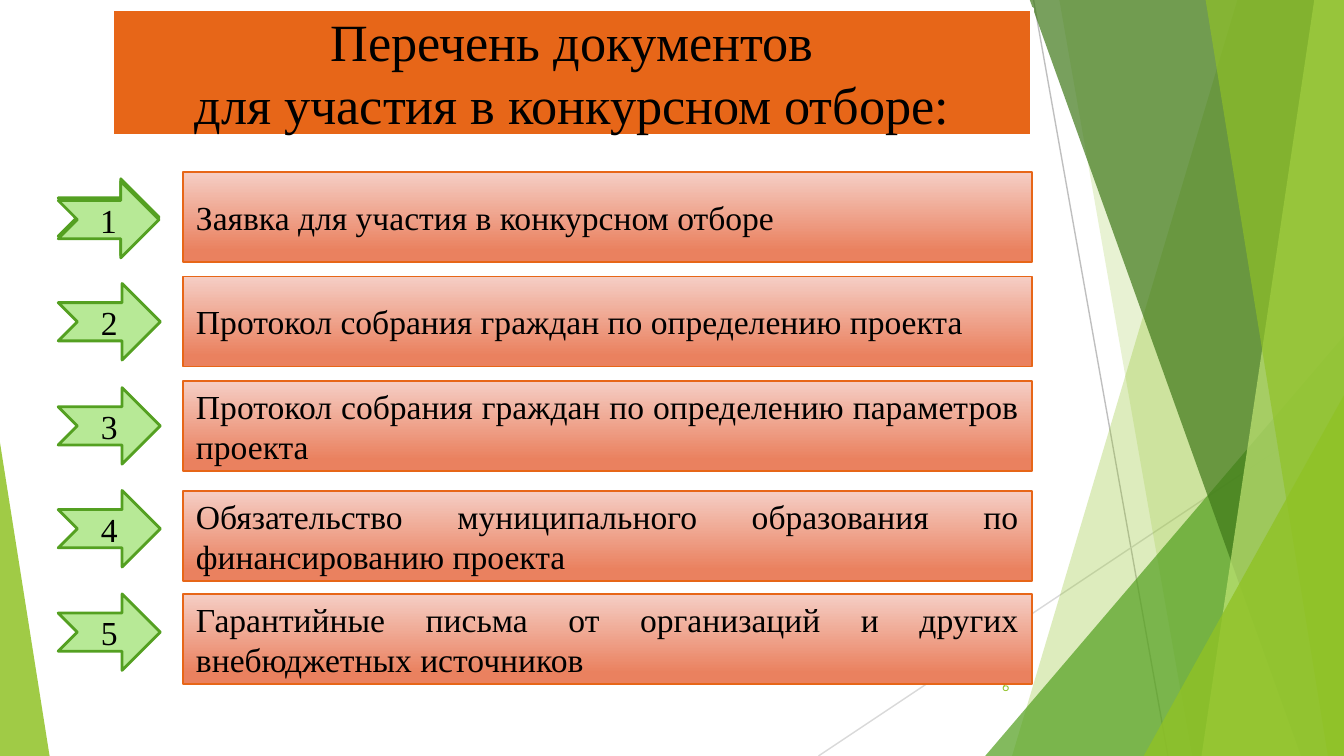
"""Build the slide listing the documents for the competitive selection."""
from lxml import etree
from pptx import Presentation
from pptx import util as u
from pptx.dml import color
from pptx.enum import shapes, text
from pptx.oxml import ns

Pt = u.Pt
COLORS = {
    "lime": "90C226", "pale lime": "C0E474", "green": "54A021", "dark green": "3F7819",
    "arrow": "B7E996", "orange": "E76618", "pink": "F5CEC5", "coral": "EA815F",
    "grey": "BFBFBF", "light grey": "D9D9D9", "black": "000000", "white": "FFFFFF",
}
RGB = {name: color.RGBColor.from_string(value) for name, value in COLORS.items()}


def write(shape, words, size=18, font="Times New Roman", ink="black",
          align=text.PP_ALIGN.CENTER):
    frame = shape.text_frame
    frame.word_wrap = True
    frame.vertical_anchor = text.MSO_ANCHOR.MIDDLE
    paragraph = frame.paragraphs[0]
    paragraph.text = words
    paragraph.alignment = align
    for run in paragraph.runs:
        run.font.size = Pt(size)
        run.font.name = font
        run.font.color.rgb = RGB[ink]


def paint(shape, fill, alpha=100, line=None, width=1):
    shape.shadow.inherit = False
    if fill == "gradient":
        shape.fill.gradient()
        shape.fill.gradient_angle = 270
        for stop, tint, position in zip(shape.fill.gradient_stops, ("pink", "coral"), (0, 0.88)):
            stop.color.rgb = RGB[tint]
            stop.position = position
    else:
        shape.fill.solid()
        shape.fill.fore_color.rgb = RGB[fill]
    if alpha < 100:
        tint = shape._element.spPr.find(ns.qn("a:solidFill"))[0]
        etree.SubElement(tint, ns.qn("a:alpha")).set("val", str(alpha * 1000))
    if line:
        shape.line.color.rgb = RGB[line]
        shape.line.width = Pt(width)
    else:
        shape.line.fill.background()


deck = Presentation()
deck.slide_width, deck.slide_height = Pt(720), Pt(405)
slide = deck.slides.add_slide(deck.slide_layouts[6])
parts = slide.shapes

for x1, y1, x2, y2, tint in ((553.7, 0, 625.7, 405, "grey"),
                             (720, 217.4, 438.5, 405, "light grey")):
    ray = parts.add_connector(shapes.MSO_CONNECTOR.STRAIGHT, Pt(x1), Pt(y1), Pt(x2), Pt(y2))
    ray.line.color.rgb = RGB[tint]
    ray.line.width = Pt(0.75)
    etree.SubElement(ray._element.spPr, ns.qn("a:effectLst"))

facets = (
    ("band", 663.1, 542.2, "lime", 30),
    ("band", 567.4, 638.6, "lime", 20),
    ("corner", (527.8, 180, 192.2, 225), 1, "green", 72),
    ("band", 551.5, 697, "dark green", 70),
    ("band", 704.2, 643.7, "pale lime", 70),
    ("band", 645.8, 711.4, "lime", 65),
    ("corner", (612.7, 211.7, 107.3, 193.3), 1, "lime", 80),
    ("corner", (0, 237, 26.6, 168), 0, "lime", 85),
)
for kind, place, turn, tint, alpha in facets:
    if kind == "band":
        outline = parts.build_freeform(Pt(place), Pt(-0.6))
        outline.add_line_segments([(Pt(720), Pt(-0.6)), (Pt(720), Pt(405)), (Pt(turn), Pt(405))])
        facet = outline.convert_to_shape()
    else:
        facet = parts.add_shape(shapes.MSO_SHAPE.ISOSCELES_TRIANGLE, *map(Pt, place))
        facet.adjustments[0] = turn
    paint(facet, tint, alpha)

page_number = parts.add_textbox(Pt(507.6), Pt(357.1), Pt(40.3), Pt(21.6))
write(page_number, "6", size=6.8, font="Lato", ink="lime", align=text.PP_ALIGN.RIGHT)

heading = parts.add_shape(shapes.MSO_SHAPE.RECTANGLE, Pt(59.8), Pt(5), Pt(493.2), Pt(67.7))
paint(heading, "orange", line="white", width=2)
write(heading, "Перечень документов\vдля участия в конкурсном отборе:", size=28)

documents = (
    (92, "Заявка для участия в конкурсном отборе"),
    (148.2, "Протокол собрания граждан по определению проекта"),
    (204, "Протокол собрания граждан по определению параметров проекта"),
    (263, "Обязательство муниципального образования по финансированию проекта"),
    (318.2, "Гарантийные письма от организаций и других внебюджетных источников"),
)
for top, words in documents:
    document = parts.add_shape(shapes.MSO_SHAPE.RECTANGLE, Pt(97.9), Pt(top), Pt(455), Pt(48.2))
    paint(document, "gradient", line="orange")
    write(document, words, align=text.PP_ALIGN.JUSTIFY)

arrows = ((1, 95.8, 54), (1, 97.2, 54), (2, 151.9, 54.7), (3, 207.7, 54.7),
          (4, 262.8, 54.7), (5, 318.2, 54.7))
for number, top, width in arrows:
    arrow = parts.add_shape(shapes.MSO_SHAPE.NOTCHED_RIGHT_ARROW,
                            Pt(31.2), Pt(top), Pt(width), Pt(41))
    paint(arrow, "arrow", line="green", width=1.5)
    write(arrow, str(number))

deck.save("out.pptx")
